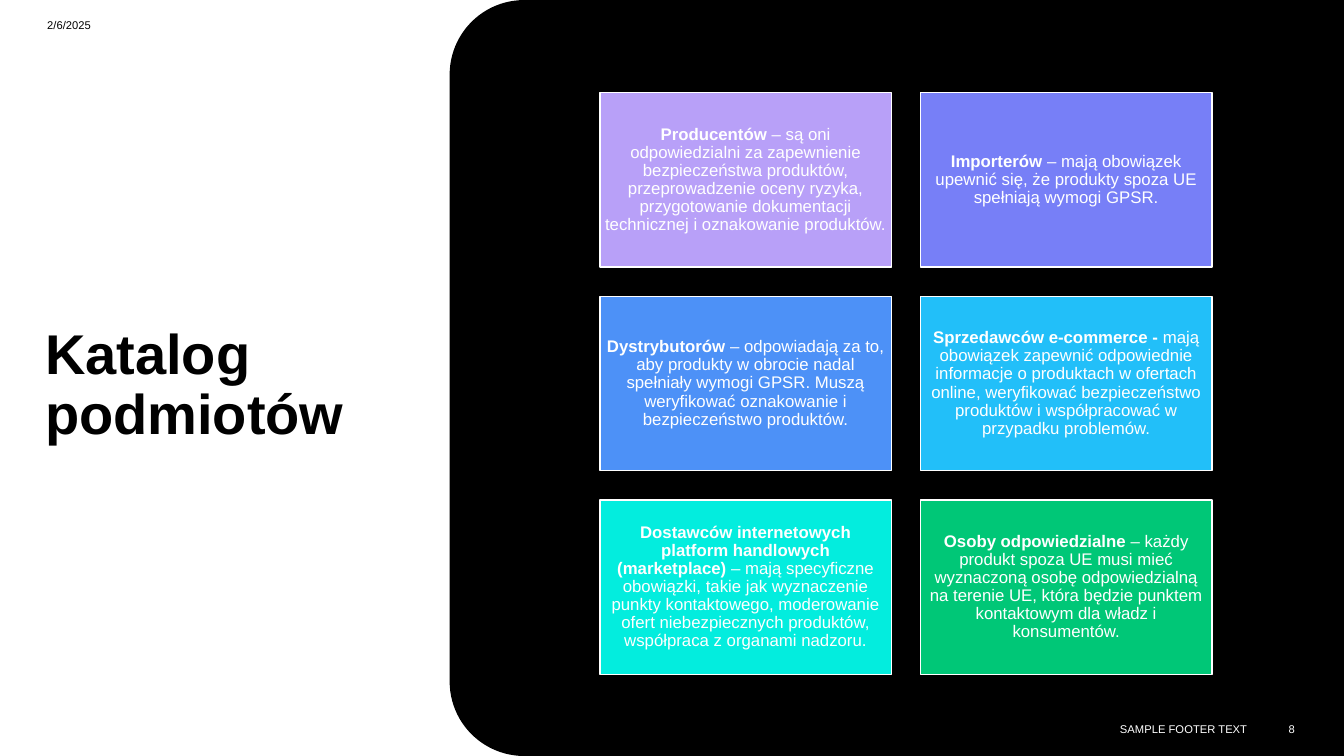
from dataclasses import dataclass

import pptx
import pptx.dml.color
import pptx.enum.shapes
import pptx.enum.text
import pptx.util

Inches = pptx.util.Inches
Pt = pptx.util.Pt
MSO_SHAPE = pptx.enum.shapes.MSO_SHAPE
PP_ALIGN = pptx.enum.text.PP_ALIGN

BLACK, WHITE = "000000", "FFFFFF"
SLIDE_WIDTH, SLIDE_HEIGHT = 13.33, 7.5
PANEL_LEFT, PANEL_RADIUS = 4.46, 0.74
GRID_LEFT, GRID_TOP, COLUMNS = 5.95, 0.92, 2
CARD_WIDTH, CARD_HEIGHT, CARD_GAP = 2.89, 1.73, 0.29
CARD_MARGIN = 0.05


@dataclass(frozen=True)
class Box:
    left: float
    top: float
    width: float
    height: float

    def emu(self) -> tuple[int, ...]:
        return tuple(Inches(v) for v in (self.left, self.top, self.width, self.height))


@dataclass(frozen=True)
class Label:
    text: str
    box: Box
    color: str
    size: float = 8
    bold: bool = False
    align: PP_ALIGN = PP_ALIGN.LEFT
    line_spacing: float = 1.0
    space_after: float = 6


@dataclass(frozen=True)
class Entity:
    name: str
    duty: str
    fill: str


LABELS = [
    Label("Katalog podmiotów", Box(0.35, 0.9, 3.53, 5.87), BLACK,
          size=40, bold=True, line_spacing=0.9, space_after=0),
    Label("2/6/2025", Box(0.37, 0.07, 3, 0.35), BLACK),
    Label("SAMPLE FOOTER TEXT", Box(8.03, 7.03, 4.44, 0.4), WHITE, align=PP_ALIGN.RIGHT),
    Label("8", Box(12.47, 7.03, 0.47, 0.4), WHITE, align=PP_ALIGN.RIGHT),
]

ENTITIES = [
    Entity("Producentów",
           " – są oni odpowiedzialni za zapewnienie bezpieczeństwa produktów, przeprowadzenie "
           "oceny ryzyka, przygotowanie dokumentacji technicznej i oznakowanie produktów.",
           "B8A0F8"),
    Entity("Importerów",
           " – mają obowiązek upewnić się, że produkty spoza UE spełniają wymogi GPSR.",
           "777FF7"),
    Entity("Dystrybutorów",
           " – odpowiadają za to, aby produkty w obrocie nadal spełniały wymogi GPSR. "
           "Muszą weryfikować oznakowanie i bezpieczeństwo produktów.",
           "4D91F7"),
    Entity("Sprzedawców e-commerce -",
           " mają obowiązek zapewnić odpowiednie informacje o produktach w ofertach online, "
           "weryfikować bezpieczeństwo produktów i współpracować w przypadku problemów.",
           "22BFF9"),
    Entity("Dostawców internetowych platform handlowych (marketplace)",
           " – mają specyficzne obowiązki, takie jak wyznaczenie punkty kontaktowego, "
           "moderowanie ofert niebezpiecznych produktów, współpraca z organami nadzoru.",
           "03EDDE"),
    Entity("Osoby odpowiedzialne",
           " – każdy produkt spoza UE musi mieć wyznaczoną osobę odpowiedzialną na terenie UE, "
           "która będzie punktem kontaktowym dla władz i konsumentów.",
           "00C777"),
]


def rgb(color: str) -> pptx.dml.color.RGBColor:
    return pptx.dml.color.RGBColor.from_string(color)


def style_run(run, size: float, color: str, bold: bool) -> None:
    run.font.name = "Arial"
    run.font.size = Pt(size)
    run.font.bold = bold
    run.font.color.rgb = rgb(color)


def add_filled(slide, kind: MSO_SHAPE, box: Box, fill: str):
    """Add a flat shape without outline or shadow."""
    shape = slide.shapes.add_shape(kind, *box.emu())
    shape.shadow.inherit = False
    shape.fill.solid()
    shape.fill.fore_color.rgb = rgb(fill)
    shape.line.fill.background()
    return shape


def add_panel(slide) -> None:
    """Add the black panel; turning it a quarter left puts its round corners on the left."""
    width = SLIDE_WIDTH - PANEL_LEFT
    offset = (width - SLIDE_HEIGHT) / 2
    upright = Box(PANEL_LEFT + offset, -offset, SLIDE_HEIGHT, width)
    panel = add_filled(slide, MSO_SHAPE.ROUND_2_SAME_RECTANGLE, upright, BLACK)
    panel.adjustments[0] = PANEL_RADIUS / SLIDE_HEIGHT
    panel.rotation = 270


def add_label(slide, label: Label) -> None:
    frame = slide.shapes.add_textbox(*label.box.emu()).text_frame
    frame.word_wrap = True
    frame.vertical_anchor = pptx.enum.text.MSO_ANCHOR.MIDDLE
    frame.text = label.text
    paragraph = frame.paragraphs[0]
    paragraph.alignment = label.align
    paragraph.line_spacing = label.line_spacing
    paragraph.space_after = Pt(label.space_after)
    style_run(paragraph.runs[0], label.size, label.color, label.bold)


def add_card(slide, index: int, entity: Entity) -> None:
    row, column = divmod(index, COLUMNS)
    box = Box(GRID_LEFT + column * (CARD_WIDTH + CARD_GAP),
              GRID_TOP + row * (CARD_HEIGHT + CARD_GAP), CARD_WIDTH, CARD_HEIGHT)
    card = add_filled(slide, MSO_SHAPE.RECTANGLE, box, entity.fill)
    card.line.color.rgb = rgb(WHITE)
    card.line.width = Pt(1)

    frame = card.text_frame
    frame.word_wrap = True
    frame.vertical_anchor = pptx.enum.text.MSO_ANCHOR.MIDDLE
    frame.margin_left = frame.margin_right = Inches(CARD_MARGIN)
    frame.margin_top = frame.margin_bottom = Inches(CARD_MARGIN)
    frame.text = entity.name
    paragraph = frame.paragraphs[0]
    paragraph.add_run().text = entity.duty
    paragraph.alignment = PP_ALIGN.CENTER
    paragraph.line_spacing = 0.9
    name, duty = paragraph.runs
    style_run(name, 12, WHITE, True)
    style_run(duty, 12, WHITE, False)


def main() -> None:
    presentation = pptx.Presentation()
    presentation.slide_width = Inches(SLIDE_WIDTH)
    presentation.slide_height = Inches(SLIDE_HEIGHT)
    slide = presentation.slides.add_slide(presentation.slide_layouts[6])
    slide.background.fill.solid()
    slide.background.fill.fore_color.rgb = rgb(BLACK)

    add_filled(slide, MSO_SHAPE.RECTANGLE, Box(0, 0, SLIDE_WIDTH, SLIDE_HEIGHT), WHITE)
    add_panel(slide)
    for label in LABELS:
        add_label(slide, label)
    for index, entity in enumerate(ENTITIES):
        add_card(slide, index, entity)
    presentation.save("out.pptx")


if __name__ == "__main__":
    main()
